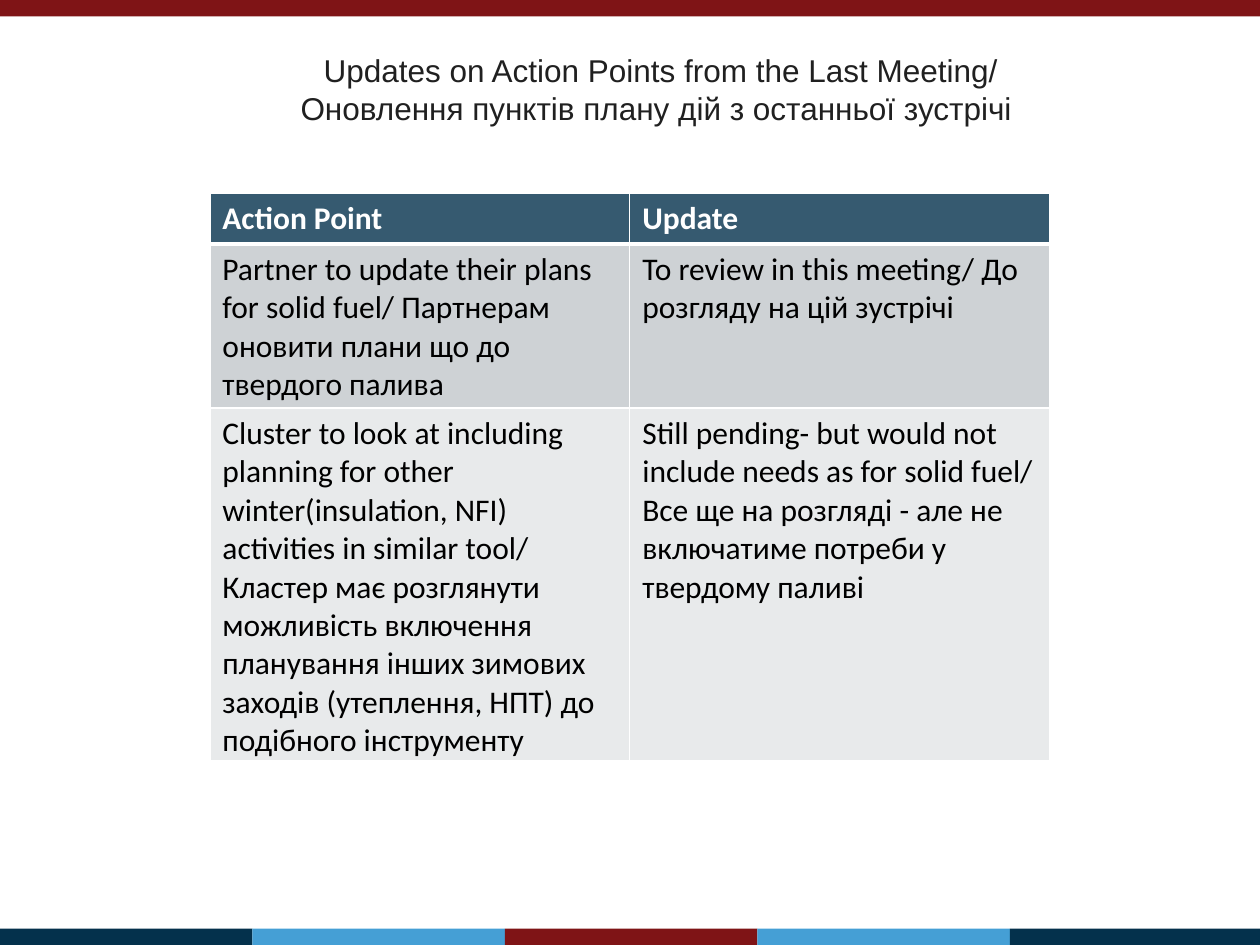
"""Build the action point update slide."""
import dataclasses

import lxml.etree
import pptx
import pptx.dml.color
import pptx.enum.shapes
import pptx.enum.text
import pptx.oxml.ns
import pptx.util

Cm, Pt = pptx.util.Cm, pptx.util.Pt


@dataclasses.dataclass(frozen=True)
class Theme:
    red: str = "7F1416"
    navy: str = "04314C"
    blue: str = "459FD5"
    white: str = "FFFFFF"
    black: str = "000000"
    title: str = "202020"
    header: str = "365A70"
    bands: tuple = ("CED2D5", "E8EAEB")
    title_font: str = "Arial"
    table_font: str = "Calibri"
    size: int = 18


THEME = Theme()
TITLE = "Updates on Action Points from the Last Meeting/ Оновлення пунктів плану дій з останньої зустрічі "
ROWS = [
    ("Action Point", "Update"),
    ("Partner to update their plans for solid fuel/ Партнерам оновити плани що до твердого палива",
     "To review in this meeting/ До розгляду на цій зустрічі"),
    ("Cluster to look at including planning for other winter(insulation, NFI) activities in similar tool/ "
     "Кластер має розглянути можливість включення планування інших зимових заходів (утеплення, НПТ) "
     "до подібного інструменту",
     "Still pending- but would not include needs as for solid fuel/ "
     "Все ще на розгляді - але не включатиме потреби у твердому паливі"),
]
ROW_HEIGHTS = (1.03, 3.3, 7.1)


def rgb(color):
    return pptx.dml.color.RGBColor.from_string(color)


def style(p, font, color, bold=False):
    p.font.name, p.font.size, p.font.bold = font, Pt(THEME.size), bold
    p.font.color.rgb = rgb(color)


def add_bar(s, left, top, width, color):
    sp = s.shapes.add_shape(pptx.enum.shapes.MSO_SHAPE.RECTANGLE,
                            Cm(left), Cm(top), Cm(width), Cm(0.33))
    sp.shadow.inherit = False
    sp.fill.solid()
    sp.fill.fore_color.rgb = rgb(color)
    sp.line.fill.background()


def add_title(s, text):
    tf = s.shapes.add_textbox(Cm(5.79), Cm(0.91), Cm(15.06), Cm(1.8)).text_frame
    tf.word_wrap = True
    tf.auto_size = pptx.enum.text.MSO_AUTO_SIZE.SHAPE_TO_FIT_TEXT
    p = tf.paragraphs[0]
    p.text = text
    p.alignment = pptx.enum.text.PP_ALIGN.CENTER
    style(p, THEME.title_font, THEME.title)


def set_borders(cell, widths):
    qn = pptx.oxml.ns.qn
    pr = cell._tc.get_or_add_tcPr()
    for i, (side, width) in enumerate(widths.items()):
        ln = lxml.etree.Element(qn(f"a:ln{side}"), w=str(Pt(width)))
        fill = lxml.etree.SubElement(ln, qn("a:solidFill"))
        lxml.etree.SubElement(fill, qn("a:srgbClr"), val=THEME.white)
        pr.insert(i, ln)


def add_table(s, rows, heights):
    table = s.shapes.add_table(len(rows), len(rows[0]), Cm(4.23), Cm(3.89),
                               Cm(16.93), Cm(sum(heights))).table
    fills = (THEME.header, *THEME.bands)
    for i, (texts, height, fill) in enumerate(zip(rows, heights, fills)):
        table.rows[i].height = Cm(height)
        header = i == 0
        for j, text in enumerate(texts):
            cell = table.cell(i, j)
            cell.fill.solid()
            cell.fill.fore_color.rgb = rgb(fill)
            set_borders(cell, {"L": 1, "R": 1, "T": 3 if i == 1 else 1, "B": 3 if header else 1})
            p = cell.text_frame.paragraphs[0]
            p.text = text
            style(p, THEME.table_font, THEME.white if header else THEME.black, header)


def main():
    prs = pptx.Presentation()
    prs.slide_width, prs.slide_height = Cm(25.4), Cm(19.05)
    s = prs.slides.add_slide(prs.slide_layouts[6])
    add_bar(s, 0, 0, 25.4, THEME.red)
    stripes = (THEME.navy, THEME.blue, THEME.red, THEME.blue, THEME.navy)
    for i, color in enumerate(stripes):
        add_bar(s, i * 5.09, 18.72, 5.09, color)
    add_title(s, TITLE)
    add_table(s, ROWS, ROW_HEIGHTS)
    prs.save("out.pptx")


if __name__ == "__main__":
    main()
